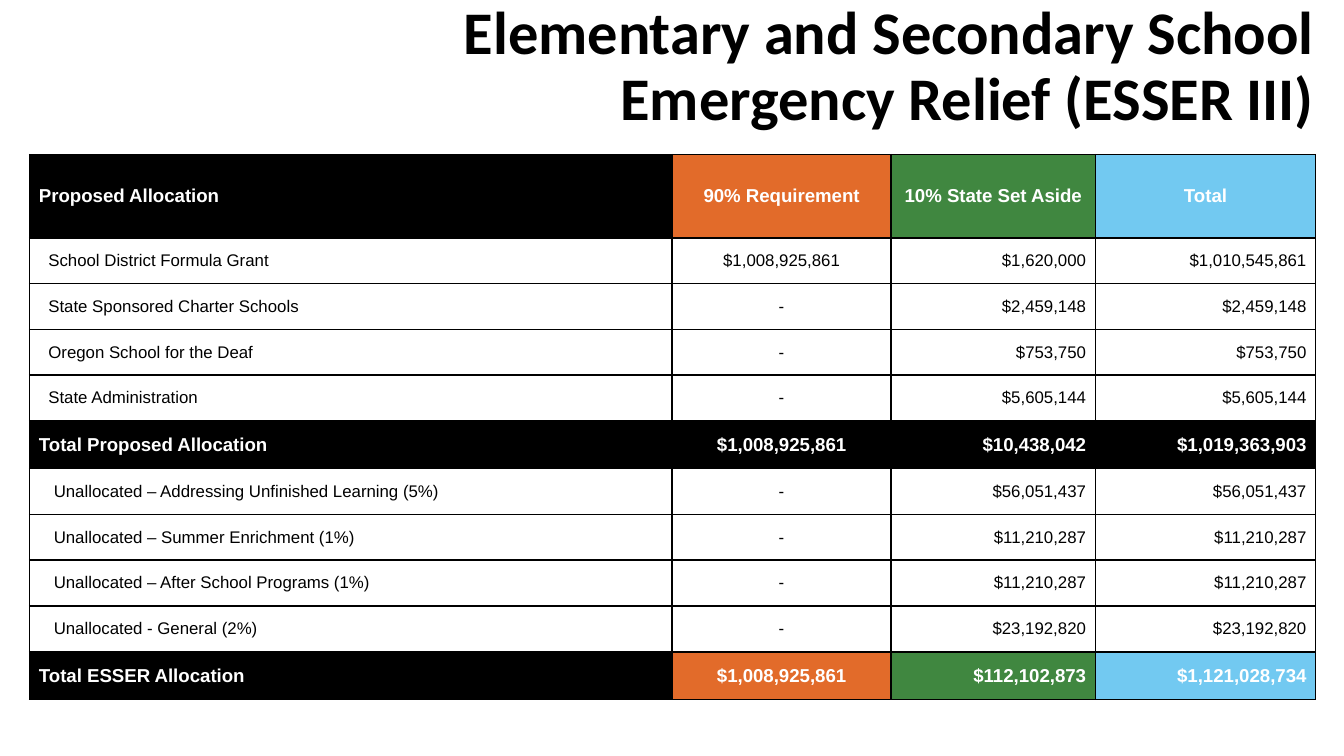
from lxml import etree
from pptx import Presentation
from pptx.dml.color import RGBColor
from pptx.enum.text import MSO_ANCHOR, MSO_AUTO_SIZE, PP_ALIGN
from pptx.oxml.ns import qn
from pptx.util import Inches, Pt

LEFT, CENTER, RIGHT, JUSTIFY = (
    PP_ALIGN.LEFT, PP_ALIGN.CENTER, PP_ALIGN.RIGHT, PP_ALIGN.JUSTIFY)
TOP, MIDDLE = MSO_ANCHOR.TOP, MSO_ANCHOR.MIDDLE
NO_AUTOFIT = MSO_AUTO_SIZE.NONE
TITLE_ONLY = 5

BLACK, WHITE = "000000", "FFFFFF"
COLORED = [BLACK, "E26B2A", "408740", "72C9F1"]
ALL_BLACK = [BLACK] * 4
ALL_WHITE = [WHITE] * 4

COL_WIDTHS = [4.78, 1.63, 1.52, 1.64]
HEADER_H, TOTAL_H, ITEM_H = 0.62, 0.35, 0.34
MARGIN_X, MARGIN_Y = 0.07, 0.1

# Row kind: height, fills, left indent
KINDS = {
    "header": (HEADER_H, COLORED, 0),
    "item": (ITEM_H, ALL_WHITE, 0.07),
    "unallocated": (ITEM_H, ALL_WHITE, 0.11),
    "subtotal": (TOTAL_H, ALL_BLACK, 0),
    "total": (TOTAL_H, COLORED, 0),
}
ROWS = [
    ("header", "Proposed Allocation", "90% Requirement", "10% State Set Aside", "Total"),
    ("item", "School District Formula Grant", "$1,008,925,861", "$1,620,000", "$1,010,545,861"),
    ("item", "State Sponsored Charter Schools", "-", "$2,459,148", "$2,459,148"),
    ("item", "Oregon School for the Deaf", "-", "$753,750", "$753,750"),
    ("item", "State Administration", "-", "$5,605,144", "$5,605,144"),
    ("subtotal", "Total Proposed Allocation", "$1,008,925,861", "$10,438,042", "$1,019,363,903"),
    ("unallocated", "Unallocated – Addressing Unfinished Learning (5%)", "-", "$56,051,437", "$56,051,437"),
    ("unallocated", "Unallocated – Summer Enrichment (1%)", "-", "$11,210,287", "$11,210,287"),
    ("unallocated", "Unallocated – After School Programs (1%)", "-", "$11,210,287", "$11,210,287"),
    ("unallocated", "Unallocated - General (2%)", "-", "$23,192,820", "$23,192,820"),
    ("total", "Total ESSER Allocation", "$1,008,925,861", "$112,102,873", "$1,121,028,734"),
]


def rgb(value):
    return RGBColor.from_string(value)


def set_font(p, name, size, color, bold):
    p.font.name = name
    p.font.size = Pt(size)
    p.font.bold = bold
    p.font.color.rgb = rgb(color)


def add_borders(cell):
    tc_pr = cell._tc.get_or_add_tcPr()
    for side in ("lnL", "lnR", "lnT", "lnB"):
        line = etree.SubElement(tc_pr, qn(f"a:{side}"), w=str(Pt(1)))
        fill = etree.SubElement(line, qn("a:solidFill"))
        etree.SubElement(fill, qn("a:srgbClr"), val=BLACK)


def fill_cell(cell, text, fill, align, anchor, indent):
    add_borders(cell)
    cell.fill.solid()
    cell.fill.fore_color.rgb = rgb(fill)
    cell.vertical_anchor = anchor
    cell.margin_left = Inches(MARGIN_X + indent)
    cell.margin_right = Inches(MARGIN_X)
    cell.margin_top = cell.margin_bottom = Inches(MARGIN_Y)
    p = cell.text_frame.paragraphs[0]
    p.text = text
    p.alignment = align
    strong = fill != WHITE
    set_font(p, "Arial", 10 if strong else 9, WHITE if strong else BLACK, strong)


def add_title(s, text):
    sp = s.shapes.title
    sp.left, sp.top, sp.width, sp.height = map(Inches, (2.06, 0.09, 7.82, 0.83))
    tf = sp.text_frame
    tf.auto_size = NO_AUTOFIT
    tf.word_wrap = True
    tf.vertical_anchor = MIDDLE
    p = tf.paragraphs[0]
    p.text = text
    p.alignment = RIGHT
    p.line_spacing = 0.9
    set_font(p, "Calibri", 32.4, BLACK, True)


def add_allocation_table(s):
    height = sum(KINDS[row[0]][0] for row in ROWS)
    frame = s.shapes.add_table(
        len(ROWS), len(COL_WIDTHS), Inches(0.22), Inches(1.15),
        Inches(sum(COL_WIDTHS)), Inches(height))
    table = frame.table
    table.first_row = table.horz_banding = False
    for col, width in zip(table.columns, COL_WIDTHS):
        col.width = Inches(width)

    for i, (kind, *texts) in enumerate(ROWS):
        row_h, fills, indent = KINDS[kind]
        table.rows[i].height = Inches(row_h)
        if kind == "header":
            aligns, anchor = [LEFT, CENTER, CENTER, CENTER], MIDDLE
        else:
            aligns, anchor = [JUSTIFY, CENTER, RIGHT, RIGHT], TOP
        for j, (text, fill, align) in enumerate(zip(texts, fills, aligns)):
            fill_cell(table.cell(i, j), text, fill, align, anchor,
                      indent if j == 0 else 0)


def main():
    prs = Presentation()
    # Widescreen, 16:9
    prs.slide_width = Inches(10)
    prs.slide_height = prs.slide_width * 9 // 16
    s = prs.slides.add_slide(prs.slide_layouts[TITLE_ONLY])
    add_title(s, "Elementary and Secondary School Emergency Relief (ESSER III)")
    add_allocation_table(s)
    prs.save("out.pptx")


if __name__ == "__main__":
    main()
